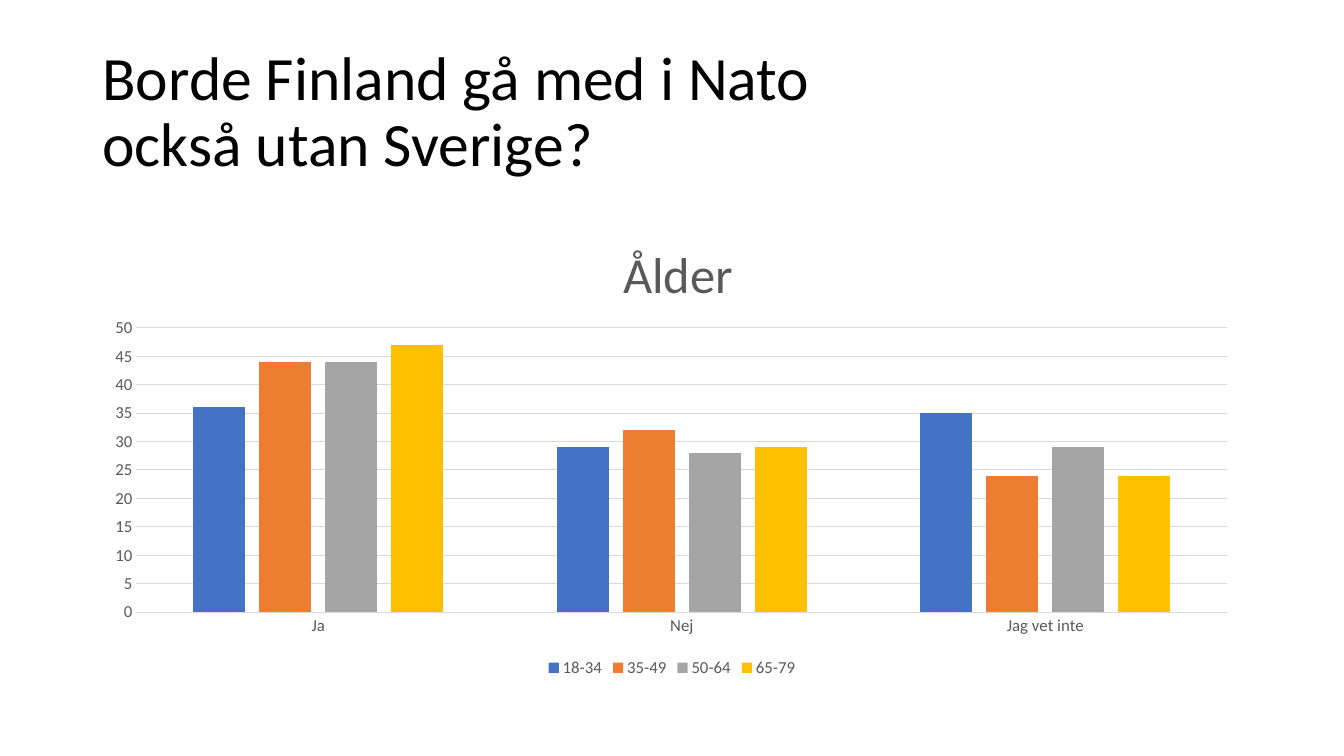
from dataclasses import dataclass

from lxml import etree
from pptx import Presentation
from pptx.chart.data import CategoryChartData
from pptx.dml.color import RGBColor
from pptx.enum.chart import XL_CHART_TYPE, XL_LEGEND_POSITION, XL_TICK_MARK
from pptx.enum.text import MSO_ANCHOR, PP_ALIGN
from pptx.oxml.ns import qn
from pptx.util import Pt

BARS = XL_CHART_TYPE.COLUMN_CLUSTERED
BOTTOM = XL_LEGEND_POSITION.BOTTOM
NO_TICK = XL_TICK_MARK.NONE
MIDDLE = MSO_ANCHOR.MIDDLE
LEFT = PP_ALIGN.LEFT
TITLE_ONLY = 5


# Theme
@dataclass(frozen=True)
class Theme:
    face: str = "Calibri"
    ink: str = "000000"
    gray: str = "595959"
    grid: str = "D9D9D9"
    head: float = 44
    title: float = 36
    label: float = 12
    rule: float = 0.75


THEME = Theme()


@dataclass(frozen=True)
class Group:
    name: str
    shares: tuple[int, ...]
    color: str


ANSWERS = ("Ja", "Nej", "Jag vet inte")
GROUPS = (
    Group("18-34", (36, 29, 35), "4472C4"),
    Group("35-49", (44, 32, 24), "ED7D31"),
    Group("50-64", (44, 28, 29), "A5A5A5"),
    Group("65-79", (47, 29, 24), "FFC000"),
)


# Helpers
def style(font, size: float, color: str) -> None:
    font.name = THEME.face
    font.size = Pt(size)
    font.bold = False
    font.color.rgb = RGBColor.from_string(color)


def write(frame, text: str, *, size: float, color: str, align=None, space=None) -> None:
    line = frame.paragraphs[0]
    line.alignment = align
    line.line_spacing = space
    for i, part in enumerate(text.split("\n")):
        if i:
            line.add_line_break()
        run = line.add_run()
        run.text = part
        style(run.font, size, color)


def rule(line) -> None:
    line.color.rgb = RGBColor.from_string(THEME.grid)
    line.width = Pt(THEME.rule)


def place(part, index: int, **spots) -> None:
    """Set a manual layout, in fractions of the chart, on a chart part."""
    for old in part.findall(qn("c:layout")):
        part.remove(old)
    layout = etree.Element(qn("c:layout"))
    part.insert(index, layout)
    manual = etree.SubElement(layout, qn("c:manualLayout"))
    for tag, value in spots.items():
        etree.SubElement(manual, qn(f"c:{tag}")).set("val", str(value))


# Chart
def draw_chart(slide) -> None:
    data = CategoryChartData()
    data.categories = ANSWERS
    for group in GROUPS:
        data.add_series(group.name, group.shares)
    chart = slide.shapes.add_chart(BARS, Pt(66), Pt(144), Pt(828), Pt(343), data).chart
    style(chart.font, THEME.label, THEME.gray)

    # Title and plot area
    write(chart.chart_title.text_frame, "Ålder", size=THEME.title, color=THEME.gray)
    chart.chart_title.include_in_layout = False
    space = chart.element.chart
    place(space.find(qn("c:title")), 1, xMode="edge", yMode="edge", x=0.45, y=0.06)
    place(space.plotArea, 0, layoutTarget="inner", xMode="edge", yMode="edge",
          x=0.038, y=0.263, w=0.941, h=0.592)

    # Bars
    plot = chart.plots[0]
    plot.gap_width = 219
    plot.overlap = -27
    plot.vary_by_categories = False
    for bars, group in zip(plot.series, GROUPS):
        bars.format.fill.solid()
        bars.format.fill.fore_color.rgb = RGBColor.from_string(group.color)

    # Axes
    for axis in (chart.category_axis, chart.value_axis):
        axis.major_tick_mark = NO_TICK
        axis.minor_tick_mark = NO_TICK
        style(axis.tick_labels.font, THEME.label, THEME.gray)
    rule(chart.category_axis.format.line)
    scale = chart.value_axis
    scale.minimum_scale, scale.maximum_scale, scale.major_unit = 0, 50, 5
    scale.format.line.fill.background()
    rule(scale.major_gridlines.format.line)

    # Legend
    chart.has_legend = True
    chart.legend.position = BOTTOM
    chart.legend.include_in_layout = False
    style(chart.legend.font, THEME.label, THEME.gray)


# Slide
def main() -> None:
    deck = Presentation()
    deck.slide_width, deck.slide_height = Pt(960), Pt(540)
    slide = deck.slides.add_slide(deck.slide_layouts[TITLE_ONLY])
    head = slide.shapes.title
    head.left, head.top, head.width, head.height = Pt(66), Pt(28.75), Pt(828), Pt(104.4)
    head.text_frame.vertical_anchor = MIDDLE
    write(head.text_frame, "Borde Finland gå med i Nato \nockså utan Sverige?",
          size=THEME.head, color=THEME.ink, align=LEFT, space=0.9)
    draw_chart(slide)
    deck.save("out.pptx")


if __name__ == "__main__":
    main()
